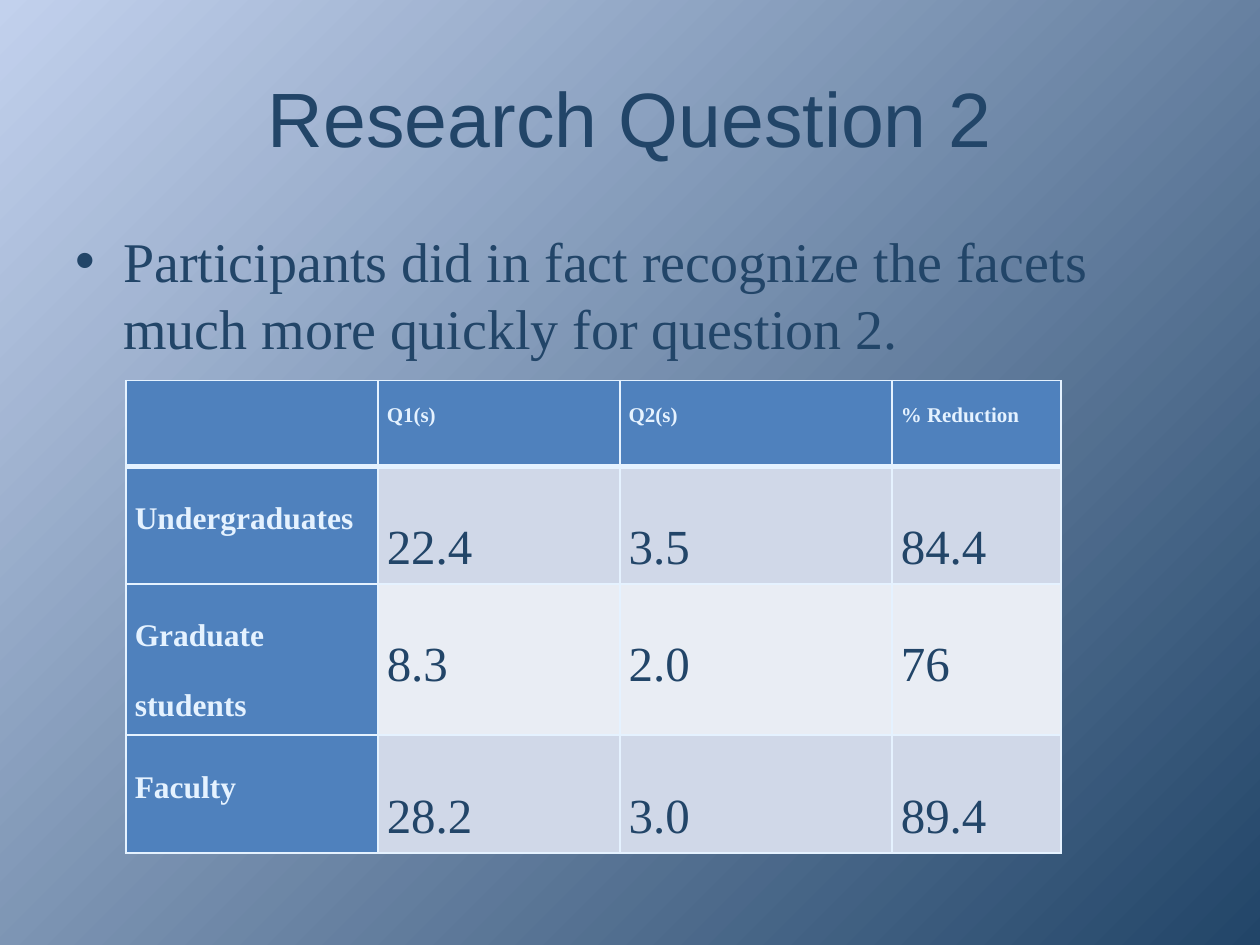
from dataclasses import dataclass

from lxml.etree import SubElement
from pptx import Presentation
from pptx.dml.color import RGBColor as Color
from pptx.enum.text import MSO_ANCHOR as Anchor, PP_ALIGN as Align
from pptx.oxml import parse_xml
from pptx.oxml.ns import nsdecls, qn
from pptx.util import Inches, Pt


@dataclass(frozen=True)
class Theme:
    navy: str = "224568"
    sky: str = "C2D1ED"
    ice: str = "E5F2FF"
    blue: str = "4F81BD"
    bands: tuple = ("D0D8E8", "E9EDF4")
    heading_font: str = "Arial"
    body_font: str = "Times New Roman"
    title_size: int = 44
    body_size: int = 32
    value_size: int = 28
    label_size: int = 18
    header_size: int = 12


@dataclass(frozen=True)
class TextStyle:
    font: str
    size: int
    color: str
    bold: bool = False


@dataclass(frozen=True)
class Box:
    left: float
    top: float
    width: float
    height: float

    def lengths(self) -> tuple:
        return tuple(map(Inches, (self.left, self.top, self.width, self.height)))


THEME = Theme()
TITLE = TextStyle(THEME.heading_font, THEME.title_size, THEME.navy)
BODY = TextStyle(THEME.body_font, THEME.body_size, THEME.navy)
HEADER = TextStyle(THEME.body_font, THEME.header_size, THEME.ice, True)
LABEL = TextStyle(THEME.body_font, THEME.label_size, THEME.ice, True)
VALUE = TextStyle(THEME.body_font, THEME.value_size, THEME.navy)

COLUMN_WIDTHS = (2, 1.92, 2.16, 1.34)
ROW_HEIGHTS = (0.68, 0.68, 0.91, 0.68)
RECOGNITION_TIMES = (
    ("", "Q1(s)", "Q2(s)", "% Reduction"),
    ("Undergraduates", "22.4", "3.5", "84.4"),
    ("Graduate students", "8.3", "2.0", "76"),
    ("Faculty", "28.2", "3.0", "89.4"),
)


def add_run(paragraph, text: str, style: TextStyle) -> None:
    run = paragraph.add_run()
    run.text = text
    run.font.name = style.font
    run.font.size = Pt(style.size)
    run.font.bold = style.bold
    run.font.color.rgb = Color.from_string(style.color)


def add_text(slide, box: Box, text: str, style: TextStyle, anchor=Anchor.TOP):
    """Add a wrapping text box and return its paragraph."""
    frame = slide.shapes.add_textbox(*box.lengths()).text_frame
    frame.word_wrap = True
    frame.vertical_anchor = anchor
    paragraph = frame.paragraphs[0]
    add_run(paragraph, text, style)
    return paragraph


def add_bullet(paragraph, indent: float) -> None:
    properties = paragraph._p.get_or_add_pPr()
    properties.set("marL", str(Inches(indent)))
    properties.set("indent", str(-Inches(indent)))
    SubElement(properties, qn("a:buFont")).set("typeface", "Arial")
    SubElement(properties, qn("a:buChar")).set("char", "•")


def set_borders(cell, color: str, widths: dict) -> None:
    properties = cell._tc.get_or_add_tcPr()
    for position, (side, width) in enumerate(widths.items()):
        line = parse_xml(
            f'<a:ln{side} {nsdecls("a")} w="{Pt(width)}"><a:solidFill>'
            f'<a:srgbClr val="{color}"/></a:solidFill></a:ln{side}>'
        )
        properties.insert(position, line)


def fill_cell(cell, text: str, row: int, column: int) -> None:
    is_heading = row == 0 or column == 0
    fill = THEME.blue if is_heading else THEME.bands[(row - 1) % 2]
    cell.fill.solid()
    cell.fill.fore_color.rgb = Color.from_string(fill)
    set_borders(cell, THEME.ice, {
        "L": 1, "R": 1, "T": 3 if row == 1 else 1, "B": 3 if row == 0 else 1,
    })
    if not text:
        return
    cell.margin_left = cell.margin_right = Inches(0.07)
    cell.margin_top = cell.margin_bottom = 0
    paragraph = cell.text_frame.paragraphs[0]
    paragraph.line_spacing = 2.0
    style = HEADER if row == 0 else LABEL if column == 0 else VALUE
    add_run(paragraph, text, style)


def add_times_table(slide, left: float, top: float) -> None:
    box = Box(left, top, sum(COLUMN_WIDTHS), sum(ROW_HEIGHTS))
    table = slide.shapes.add_table(
        len(ROW_HEIGHTS), len(COLUMN_WIDTHS), *box.lengths()
    ).table
    for column, width in zip(table.columns, COLUMN_WIDTHS):
        column.width = Inches(width)
    for row, height in zip(table.rows, ROW_HEIGHTS):
        row.height = Inches(height)
    for row, texts in enumerate(RECOGNITION_TIMES):
        for column, text in enumerate(texts):
            fill_cell(table.cell(row, column), text, row, column)


def set_background(slide) -> None:
    """Shade diagonally from light top left to dark bottom right."""
    fill = slide.background.fill
    fill.gradient()
    fill.gradient_angle = 315
    for stop, color in zip(fill.gradient_stops, (THEME.sky, THEME.navy)):
        stop.color.rgb = Color.from_string(color)


def main() -> None:
    presentation = Presentation()
    presentation.slide_width, presentation.slide_height = Inches(10), Inches(7.5)
    slide = presentation.slides.add_slide(presentation.slide_layouts[6])
    set_background(slide)

    title = add_text(slide, Box(0.5, 0.3, 9, 1.25), "Research Question 2",
                     TITLE, Anchor.MIDDLE)
    title.alignment = Align.CENTER

    finding = add_text(
        slide, Box(0.5, 1.75, 9, 4.95),
        "Participants did in fact recognize the facets much more quickly "
        "for question 2.", BODY)
    finding.space_before = Pt(0.2 * THEME.body_size)
    add_bullet(finding, 0.38)

    add_times_table(slide, 1, 3.02)
    presentation.save("out.pptx")


if __name__ == "__main__":
    main()
